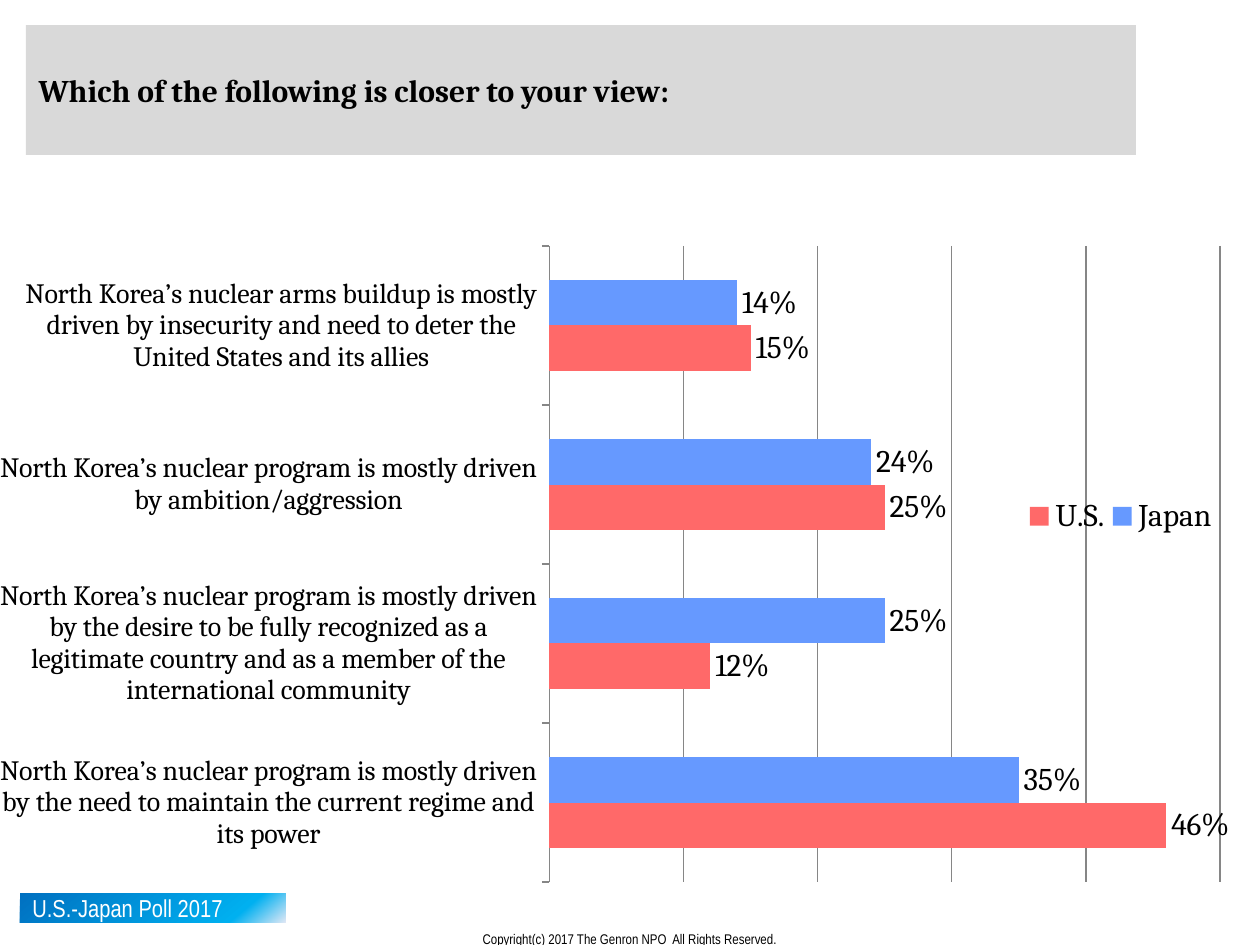
from dataclasses import dataclass

from lxml.etree import SubElement
from pptx import Presentation
from pptx.chart.data import CategoryChartData
from pptx.dml.color import RGBColor
from pptx.enum.chart import XL_CHART_TYPE, XL_LABEL_POSITION, XL_LEGEND_POSITION, XL_TICK_LABEL_POSITION, XL_TICK_MARK
from pptx.enum.shapes import MSO_SHAPE
from pptx.enum.text import MSO_ANCHOR, PP_ALIGN
from pptx.oxml.ns import qn
from pptx.util import Emu, Pt

EMU_PER_PX = 914400 / 126


@dataclass(frozen=True)
class Theme:
    serif: str = "Cambria"
    narrow: str = "Arial Narrow"
    ink: str = "000000"
    white: str = "FFFFFF"
    band: str = "D9D9D9"
    grid: str = "868686"
    badge_stops: tuple = ((0, "0070C0"), (81, "00B0F0"), (100, "E1E8F5"))
    heading: int = 18
    category: int = 16
    badge: int = 14
    copyright: int = 8


@dataclass(frozen=True)
class Box:
    left: int
    top: int
    width: int
    height: int

    def emu(self) -> tuple:
        return tuple(px(n) for n in (self.left, self.top, self.width, self.height))


@dataclass(frozen=True)
class Country:
    name: str
    shares: tuple
    color: str


THEME = Theme()
ANSWERS = (
    "North Korea’s nuclear arms buildup is mostly driven by insecurity and need to deter the United States and its allies",
    "North Korea’s nuclear program is mostly driven by ambition/aggression",
    "North Korea’s nuclear program is mostly driven by the desire to be fully recognized as a legitimate country and as a member of the international community",
    "North Korea’s nuclear program is mostly driven by the need to maintain the current regime and its power",
)
COUNTRIES = (
    Country("Japan", (0.14, 0.24, 0.25, 0.35), "6699FF"),
    Country("U.S.", (0.15, 0.25, 0.12, 0.46), "FF6969"),
)


def px(length: int) -> Emu:
    return Emu(round(length * EMU_PER_PX))


def apply(target, formats: dict) -> None:
    for attribute, value in formats.items():
        setattr(target, attribute, value)


def style_font(font, face: str, size: int, color: str, bold: bool = False) -> None:
    apply(font, {"name": face, "size": Pt(size), "bold": bold})
    font.color.rgb = RGBColor.from_string(color)


def write(shape, text: str, face: str, size: int, color: str, bold: bool = False,
          align=PP_ALIGN.LEFT, anchor=MSO_ANCHOR.MIDDLE) -> None:
    frame = shape.text_frame
    apply(frame, {"text": text, "word_wrap": True, "vertical_anchor": anchor})
    frame.paragraphs[0].alignment = align
    style_font(frame.paragraphs[0].runs[0].font, face, size, color, bold)


def add_question(slide, box: Box) -> None:
    question = slide.shapes.title
    apply(question, dict(zip(("left", "top", "width", "height"), box.emu())))
    question.fill.solid()
    question.fill.fore_color.rgb = RGBColor.from_string(THEME.band)
    write(question, "Which of the following is closer to your view:",
          THEME.serif, THEME.heading, THEME.ink, bold=True)


def add_badge(slide, box: Box) -> None:
    badge = slide.shapes.add_shape(MSO_SHAPE.RECTANGLE, *box.emu())
    badge.shadow.inherit = False
    badge.line.fill.background()
    badge.fill.gradient()
    badge.fill.gradient_angle = 310
    stops = badge._element.spPr.find(".//" + qn("a:gsLst"))
    for stop in list(stops):
        stops.remove(stop)
    for position, color in THEME.badge_stops:
        stop = SubElement(stops, qn("a:gs"), pos=str(position * 1000))
        SubElement(stop, qn("a:srgbClr"), val=color)
    write(badge, "U.S.-Japan Poll 2017", THEME.narrow, THEME.badge, THEME.white)


def place(element, before: str, fractions: dict, inner: bool = False) -> None:
    for old in element.findall(qn("c:layout")):
        element.remove(old)
    layout = SubElement(element, qn("c:layout"))
    element.find(qn(before)).addprevious(layout)
    manual = SubElement(layout, qn("c:manualLayout"))
    settings = {"layoutTarget": "inner"} if inner else {}
    settings |= {"xMode": "edge", "yMode": "edge"} | fractions
    for tag, value in settings.items():
        SubElement(manual, qn(f"c:{tag}"), val=str(value))


def add_poll_chart(slide, box: Box) -> None:
    poll = CategoryChartData(number_format="0%")
    poll.categories = ANSWERS
    for country in COUNTRIES:
        poll.add_series(country.name, country.shares)
    chart = slide.shapes.add_chart(XL_CHART_TYPE.BAR_CLUSTERED, *box.emu(), poll).chart
    apply(chart, {"has_title": False, "has_legend": True})
    style_font(chart.font, THEME.serif, THEME.heading, THEME.ink)

    apply(chart.legend, {"position": XL_LEGEND_POSITION.RIGHT, "include_in_layout": False})
    style_font(chart.legend.font, THEME.serif, THEME.heading, THEME.ink)
    place(chart.legend._element, "c:overlay", {"x": 0.82, "y": 0.42, "w": 0.16, "h": 0.07})
    plot_area = chart._chartSpace.chart.plotArea
    place(plot_area, "c:barChart", {"x": 0.44, "y": 0.06, "w": 0.54, "h": 0.93}, inner=True)

    answers, shares = chart.category_axis, chart.value_axis
    apply(answers, {"reverse_order": True, "major_tick_mark": XL_TICK_MARK.OUTSIDE,
                    "minor_tick_mark": XL_TICK_MARK.NONE,
                    "tick_label_position": XL_TICK_LABEL_POSITION.NEXT_TO_AXIS})
    style_font(answers.tick_labels.font, THEME.serif, THEME.category, THEME.ink)
    apply(shares, {"visible": False, "minimum_scale": 0, "maximum_scale": 0.5,
                   "major_unit": 0.1, "has_major_gridlines": True})
    for line in (answers.format.line, shares.major_gridlines.format.line):
        line.color.rgb = RGBColor.from_string(THEME.grid)
        line.width = Pt(0.75)

    plot = chart.plots[0]
    apply(plot, {"gap_width": 150, "overlap": 0, "vary_by_categories": False})
    for country, bars in zip(COUNTRIES, plot.series):
        bars.invert_if_negative = False
        bars.format.fill.solid()
        bars.format.fill.fore_color.rgb = RGBColor.from_string(country.color)
        labels = bars.data_labels
        apply(labels, {"show_value": True, "number_format": "0%",
                       "number_format_is_linked": False,
                       "position": XL_LABEL_POSITION.OUTSIDE_END})
        style_font(labels.font, THEME.serif, THEME.heading, THEME.ink)


def main() -> None:
    deck = Presentation()
    apply(deck, {"slide_width": px(1260), "slide_height": px(945)})
    slide = deck.slides.add_slide(deck.slide_layouts[5])
    copyright_line = slide.shapes.add_textbox(*Box(286, 924, 688, 30).emu())
    write(copyright_line, "Copyright(c) 2017 The Genron NPO  All Rights Reserved.", THEME.narrow,
          THEME.copyright, THEME.ink, align=PP_ALIGN.CENTER, anchor=MSO_ANCHOR.TOP)
    add_poll_chart(slide, Box(0, 205, 1245, 684))
    add_question(slide, Box(26, 25, 1110, 130))
    add_badge(slide, Box(20, 893, 266, 30))
    deck.save("out.pptx")


if __name__ == "__main__":
    main()
